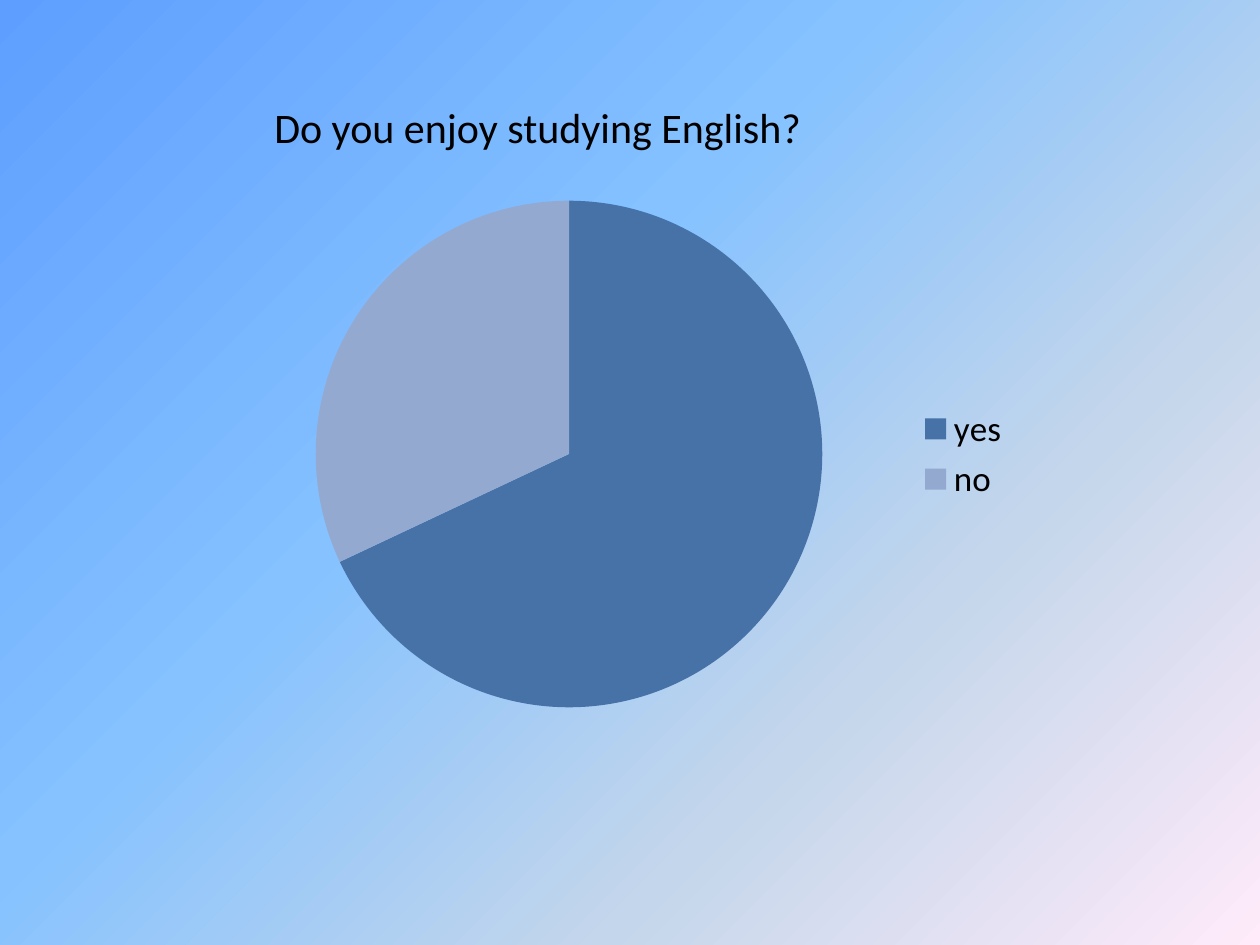
from lxml.etree import SubElement
from pptx import Presentation
from pptx.chart.data import CategoryChartData
from pptx.dml.color import RGBColor
from pptx.enum.chart import XL_CHART_TYPE, XL_LEGEND_POSITION
from pptx.oxml.ns import qn
from pptx.util import Cm, Pt

BLACK = RGBColor(0x00, 0x00, 0x00)
STEEL = RGBColor(0x46, 0x72, 0xA8)
PALE = RGBColor(0x93, 0xA9, 0xCF)
STOPS = [
    (0, RGBColor(0x5E, 0x9E, 0xFF)),
    (40, RGBColor(0x85, 0xC2, 0xFF)),
    (70, RGBColor(0xC4, 0xD6, 0xEB)),
    (100, RGBColor(0xFF, 0xEB, 0xFA)),
]


def style_font(font, size):
    for name, value in {"name": "Calibri", "size": Pt(size), "bold": False}.items():
        setattr(font, name, value)
    font.color.rgb = BLACK


prs = Presentation()
prs.slide_width, prs.slide_height = Cm(25.4), Cm(19.05)
s = prs.slides.add_slide(prs.slide_layouts[6])

fill = s.background.fill
fill.gradient()
fill.gradient_angle = 315
stops = next(s.element.iter(qn("a:gsLst")))
for stop in list(stops):
    stops.remove(stop)
for position, color in STOPS:
    stop = SubElement(stops, qn("a:gs"), pos=str(position * 1000))
    SubElement(stop, qn("a:srgbClr"), val=str(color))

tf = s.shapes.add_textbox(Cm(5.28), Cm(1.93), Cm(13.51), Cm(2.11)).text_frame
tf.word_wrap = True
r = tf.paragraphs[0].add_run()
r.text = "Do you enjoy studying English?"
style_font(r.font, 24)

data = CategoryChartData()
data.categories = ["yes", "no"]
data.add_series("Series 1", (68, 32))
chart = s.shapes.add_chart(
    XL_CHART_TYPE.PIE, Cm(4.42), Cm(3.68), Cm(16.21), Cm(10.95), data
).chart
style_font(chart.font, 10)
chart.has_title = False
chart.has_legend = True
chart.legend.position = XL_LEGEND_POSITION.RIGHT
chart.legend.include_in_layout = False
style_font(chart.legend.font, 20)

plot = chart.plots[0]
plot.vary_by_categories = True
for i, color in enumerate((STEEL, PALE)):
    point = plot.series[0].points[i].format
    point.fill.solid()
    point.fill.fore_color.rgb = color
    point.line.fill.background()

area = next(chart.element.iter(qn("c:plotArea")))
for old in area.findall(qn("c:layout")):
    area.remove(old)
layout = SubElement(area, qn("c:layout"))
area.insert(0, layout)
manual = SubElement(layout, qn("c:manualLayout"))
for tag, value in {
    "layoutTarget": "inner", "xMode": "edge", "yMode": "edge",
    "x": "0.12", "y": "0.03", "w": "0.63", "h": "0.94",
}.items():
    SubElement(manual, qn(f"c:{tag}"), val=value)

prs.save("out.pptx")
